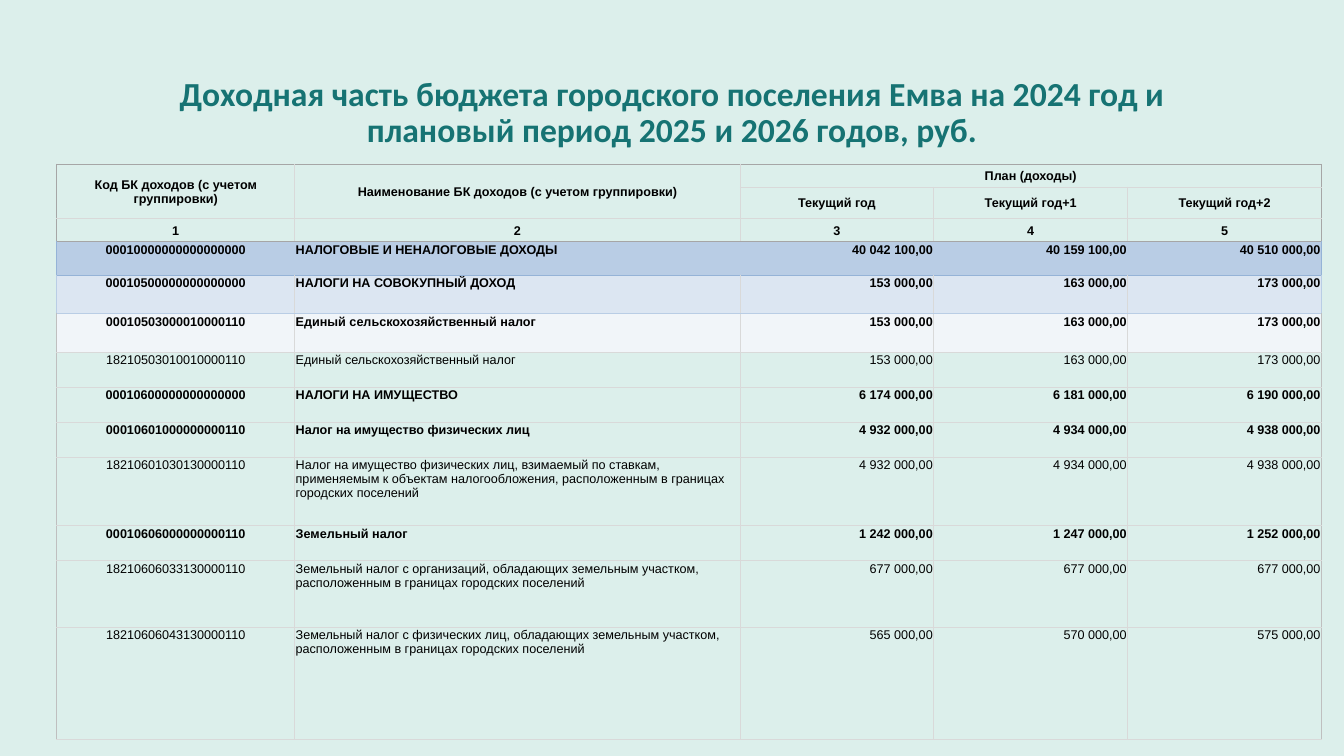
from lxml import etree
from pptx import Presentation
from pptx.dml.color import RGBColor
from pptx.enum import text
from pptx.oxml import ns
from pptx.util import Pt

TITLE = ("Доходная часть бюджета городского поселения Емва на 2024 год "
         "и плановый период 2025 и 2026 годов, руб.")
ROWS = [
    ("Код БК доходов (с учетом группировки)",
     "Наименование БК доходов (с учетом группировки)", "План (доходы)", "", ""),
    ("", "", "Текущий год", "Текущий год+1", "Текущий год+2"),
    ("1", "2", "3", "4", "5"),
    ("00010000000000000000", "НАЛОГОВЫЕ И НЕНАЛОГОВЫЕ ДОХОДЫ",
     "40 042 100,00", "40 159 100,00", "40 510 000,00"),
    ("00010500000000000000", "НАЛОГИ НА СОВОКУПНЫЙ ДОХОД",
     "153 000,00", "163 000,00", "173 000,00"),
    ("00010503000010000110", "Единый сельскохозяйственный налог",
     "153 000,00", "163 000,00", "173 000,00"),
    ("18210503010010000110", "Единый сельскохозяйственный налог",
     "153 000,00", "163 000,00", "173 000,00"),
    ("00010600000000000000", "НАЛОГИ НА ИМУЩЕСТВО",
     "6 174 000,00", "6 181 000,00", "6 190 000,00"),
    ("00010601000000000110", "Налог на имущество физических лиц",
     "4 932 000,00", "4 934 000,00", "4 938 000,00"),
    ("18210601030130000110",
     "Налог на имущество физических лиц, взимаемый по ставкам, применяемым к объектам "
     "налогообложения, расположенным в границах городских поселений",
     "4 932 000,00", "4 934 000,00", "4 938 000,00"),
    ("00010606000000000110", "Земельный налог",
     "1 242 000,00", "1 247 000,00", "1 252 000,00"),
    ("18210606033130000110",
     "Земельный налог с организаций, обладающих земельным участком, "
     "расположенным в границах городских поселений",
     "677 000,00", "677 000,00", "677 000,00"),
    ("18210606043130000110",
     "Земельный налог с физических лиц, обладающих земельным участком, "
     "расположенным в границах городских поселений",
     "565 000,00", "570 000,00", "575 000,00"),
]
MERGES = [(0, 0, 1, 0), (0, 1, 1, 1), (0, 2, 0, 4)]
WIDTHS = [170, 318, 138.5, 138.5, 138.5]
HEIGHTS = [16.5, 16.5, 16.5, 24, 27.5, 27.5, 25, 25, 25, 49, 25, 47.5, 80.5]
HEAD, TOTAL = 3, 3
GRID = "D9D9D9"
FILLS = {3: "B9CDE5", 4: "DCE6F2", 5: "F1F5F9"}
SIDES = {0: "A6A6A6", 1: "A6A6A6", 2: "A6A6A6", 3: "95B3D7", 4: "B9CDE5"}
EDGES = {0: ("A6A6A6", 0.5), 3: ("A6A6A6", 0.5), 4: ("95B3D7", 1), 5: ("B9CDE5", 0.5)}
PLAIN = "{2D5ABB26-0587-4C30-8999-92F81FD0307C}"


def paint(fill, color):
    fill.solid()
    fill.fore_color.rgb = RGBColor.from_string(color)


def style(par, face, size, color, bold, align):
    par.alignment = align
    par.font.name, par.font.size, par.font.bold = face, Pt(size), bold
    paint(par.font.fill, color)


def border(cell, side, color, width):
    props = cell._tc.get_or_add_tcPr()
    line = etree.SubElement(props, ns.qn("a:ln" + side), w=str(Pt(width)))
    solid = etree.SubElement(line, ns.qn("a:solidFill"))
    etree.SubElement(solid, ns.qn("a:srgbClr"), val=color)


def frame(cell, row, col):
    end = col + cell.span_width if cell.is_merge_origin else col + 1
    low = row + cell.span_height if cell.is_merge_origin else row + 1
    for side, edge in (("L", col), ("R", end)):
        if edge in (0, len(WIDTHS)):
            border(cell, side, SIDES.get(row, "BFBFBF"), 0.5)
        elif row != TOTAL:
            border(cell, side, GRID, 0.5)
    for side, edge in (("T", row), ("B", low)):
        border(cell, side, *EDGES.get(edge, (GRID, 0.5)))


deck = Presentation()
deck.slide_width, deck.slide_height = Pt(960), Pt(540)
slide = deck.slides.add_slide(deck.slide_layouts[6])
paint(slide.background.fill, "DCEFEB")
align = text.PP_ALIGN

box = slide.shapes.add_textbox(Pt(66), Pt(29), Pt(828), Pt(104.4)).text_frame
box.word_wrap = True
box.vertical_anchor = text.MSO_ANCHOR.MIDDLE
box.text = TITLE
box.paragraphs[0].line_spacing = 0.9
style(box.paragraphs[0], "Calibri", 24, "167373", True, align.CENTER)

table = slide.shapes.add_table(len(ROWS), len(WIDTHS), Pt(40.5), Pt(117.25),
                               Pt(sum(WIDTHS)), Pt(sum(HEIGHTS))).table
table.first_row = table.horz_banding = False
table._tbl.tblPr.find(ns.qn("a:tableStyleId")).text = PLAIN
for col, width in zip(table.columns, WIDTHS):
    col.width = Pt(width)
for row, height in zip(table.rows, HEIGHTS):
    row.height = Pt(height)
for top, left, low, right in MERGES:
    table.cell(top, left).merge(table.cell(low, right))

for r, row in enumerate(ROWS):
    bold = r < HEAD or row[0].startswith("000")
    for c, words in enumerate(row):
        cell = table.cell(r, c)
        cell.margin_left = cell.margin_right = cell.margin_top = Pt(0.72)
        cell.margin_bottom = 0
        if cell.is_spanned:
            continue
        cell.text = words
        cell.vertical_anchor = text.MSO_ANCHOR.MIDDLE if r < HEAD else text.MSO_ANCHOR.TOP
        place = align.CENTER if r < HEAD or c == 0 else align.LEFT if c == 1 else align.RIGHT
        style(cell.text_frame.paragraphs[0], "Arial", 9, "000000", bold, place)
        frame(cell, r, c)
        if r in FILLS:
            paint(cell.fill, FILLS[r])
        else:
            cell.fill.background()

deck.save("out.pptx")
